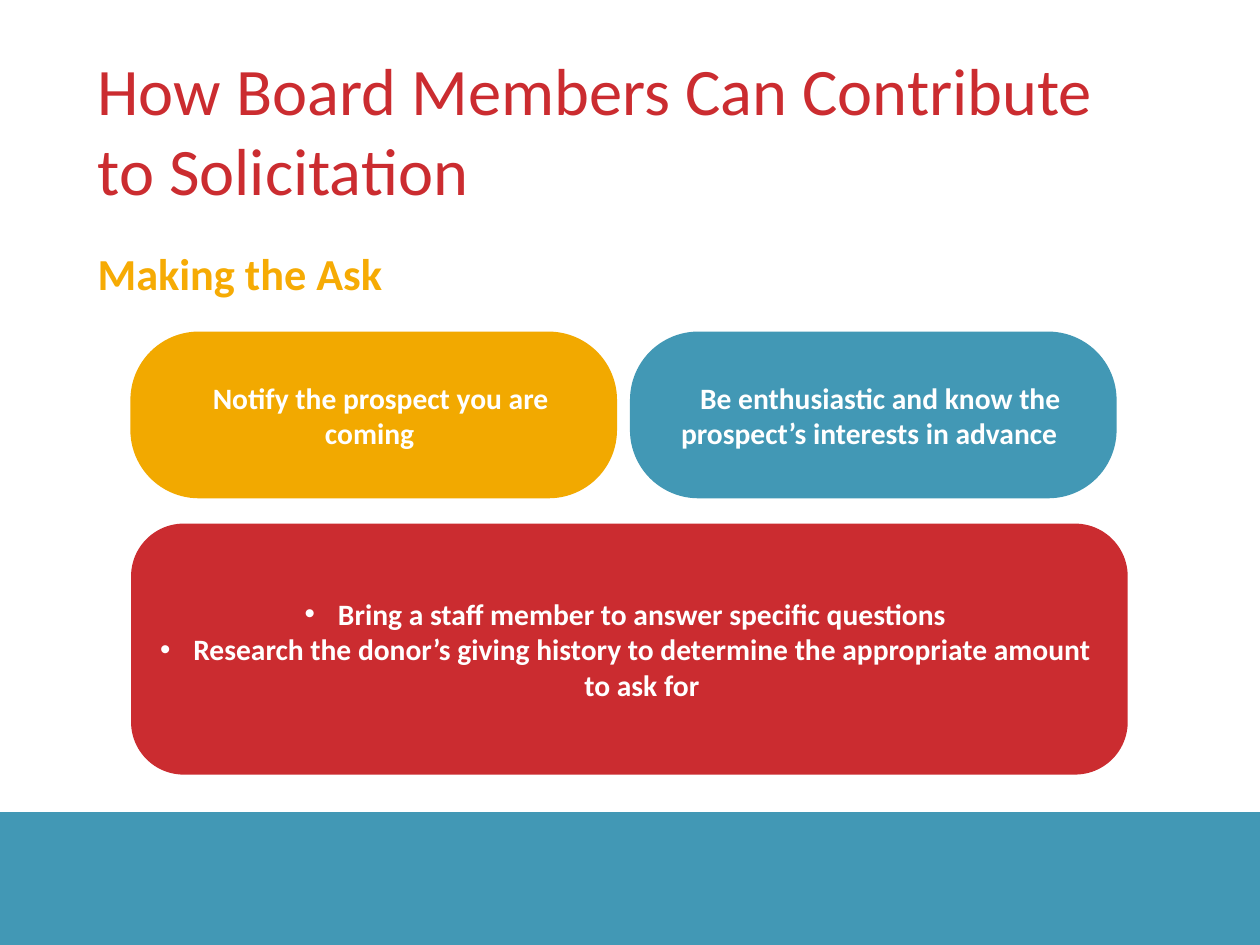
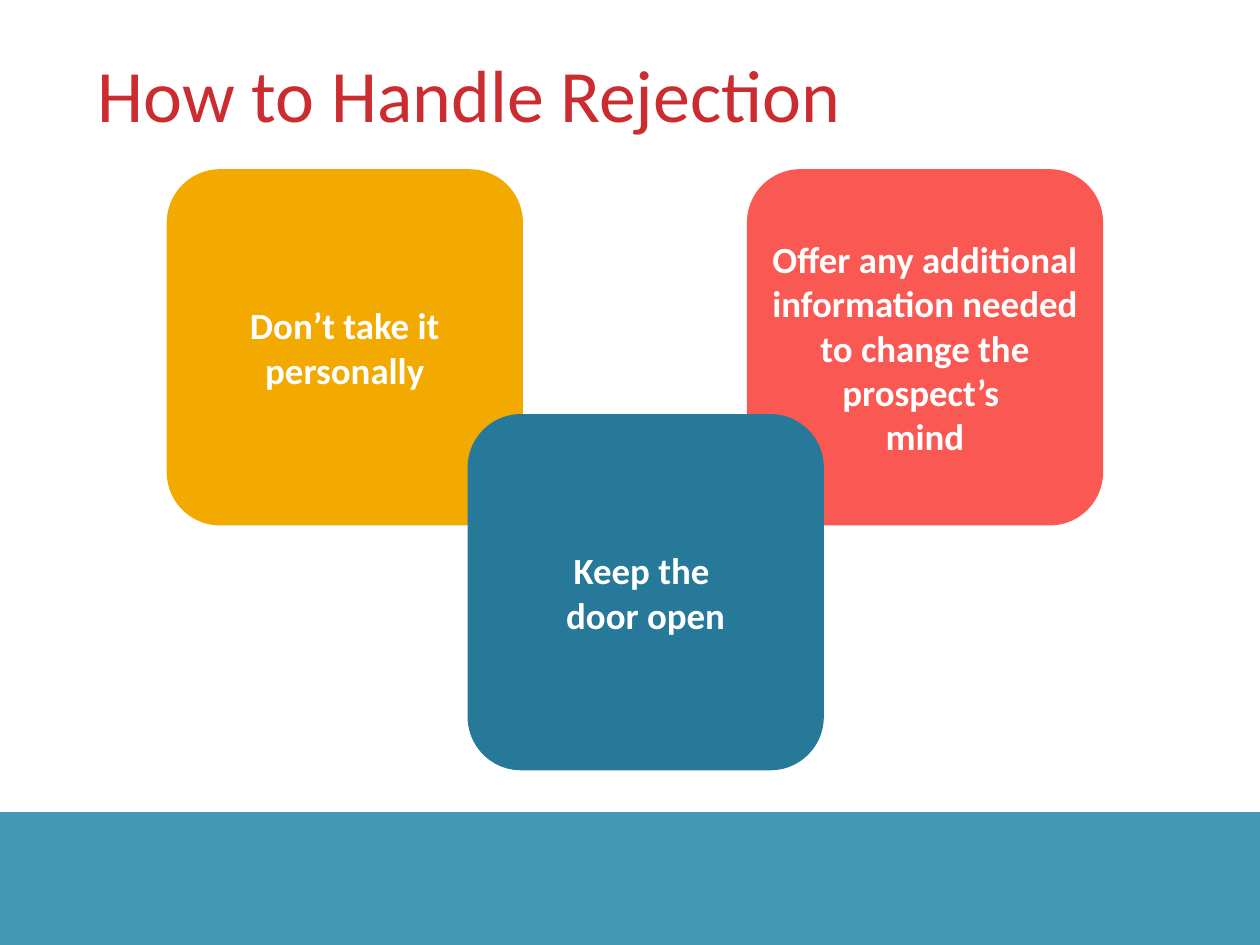
"""Two slides on asking for gifts and handling rejection."""
from lxml import etree
from pptx import Presentation
from pptx.dml.color import RGBColor
from pptx.enum.shapes import MSO_SHAPE
from pptx.enum.text import MSO_ANCHOR, PP_ALIGN
from pptx.oxml.ns import qn
from pptx.util import Pt

RECT, ROUND = MSO_SHAPE.RECTANGLE, MSO_SHAPE.ROUNDED_RECTANGLE
TOP, MIDDLE = MSO_ANCHOR.TOP, MSO_ANCHOR.MIDDLE
LEFT, CENTER = PP_ALIGN.LEFT, PP_ALIGN.CENTER

COLORS = {"red": "CB2C30", "gold": "F2A900", "amber": "F6AB04", "blue": "4298B5",
          "coral": "FA5853", "navy": "267999", "white": "FFFFFF"}
FONT = "Calibri"
SLIDE_W, SLIDE_H = 1024, 768
BAND_TOP = 660
TEXT_X, TEXT_W = 75, 874
INSET = 4.32

ASK_TITLE = "How Board Members Can Contribute to Solicitation"
ASK_SUBTITLE = "Making the Ask"
ASK_TOP = [("Notify the prospect you are coming", "gold"),
           ("Be enthusiastic and know the prospect’s interests in advance", "blue")]
ASK_BULLETS = ["Bring a staff member to answer specific questions",
               "Research the donor’s giving history to determine the appropriate amount to ask for"]
ASK_X, ASK_Y, ASK_W, ASK_H, ASK_GAP = 106, 269.5, 395.5, 135.5, 10.5
BULLETS_BOX = (106.5, 425.5, 810, 204)
ASK_RIGHT_INSET = 11
FIRST_LINE, HANGING = (0, 18), (27, -27)

REJECTION_TITLE = "How to Handle Rejection"
TILE = 289.5
REJECTION_TILES = [("Don’t take it personally", "gold", 135.5, 137.5),
                   ("Offer any additional information needed to change the prospect’s \vmind",
                    "coral", 607, 137.5),
                   ("Keep the \vdoor open", "navy", 380, 336.5)]


def rgb(name):
    return RGBColor.from_string(COLORS[name])


def indent(p, margin, first, bullet=None):
    pPr = p._p.get_or_add_pPr()
    pPr.set("marL", str(Pt(margin)))
    pPr.set("indent", str(Pt(first)))
    if bullet:
        etree.SubElement(pPr, qn("a:buFont")).set("typeface", "Arial")
        etree.SubElement(pPr, qn("a:buChar")).set("char", bullet)


def write(sp, lines, size, color, bold=True, align=CENTER, anchor=MIDDLE,
          right=INSET, margins=None, bullet=None, spacing=None):
    tf = sp.text_frame
    tf.word_wrap = True
    tf.vertical_anchor = anchor
    tf.margin_left = tf.margin_top = tf.margin_bottom = Pt(INSET)
    tf.margin_right = Pt(right)
    tf.text = "\n".join(lines)
    for p in tf.paragraphs:
        p.alignment = align
        if spacing:
            p.line_spacing = spacing
        if margins:
            indent(p, *margins, bullet)
        for r in p.runs:
            r.font.name, r.font.size, r.font.bold = FONT, Pt(size), bold
            r.font.color.rgb = rgb(color)


def add_box(s, kind, color, x, y, w, h, radius=None):
    sp = s.shapes.add_shape(kind, Pt(x), Pt(y), Pt(w), Pt(h))
    sp.shadow.inherit = False
    sp.fill.solid()
    sp.fill.fore_color.rgb = rgb(color)
    sp.line.fill.background()
    if radius:
        sp.adjustments[0] = radius
    return sp


def add_text(s, text, y, h, size, color, bold, spacing=None):
    sp = s.shapes.add_textbox(Pt(TEXT_X), Pt(y), Pt(TEXT_W), Pt(h))
    write(sp, [text], size, color, bold, LEFT, TOP, spacing=spacing)


def add_slide(prs, title, size):
    s = prs.slides.add_slide(prs.slide_layouts[6])
    add_box(s, RECT, "blue", 0, BAND_TOP, SLIDE_W, SLIDE_H - BAND_TOP)
    add_text(s, title, 35.5, 88.5, size, "red", False)
    return s


def build_ask(prs):
    s = add_slide(prs, ASK_TITLE, 54)
    for i, (text, color) in enumerate(ASK_TOP):
        x = ASK_X + i * (ASK_W + ASK_GAP)
        sp = add_box(s, ROUND, color, x, ASK_Y, ASK_W, ASK_H, 0.41)
        write(sp, [text], 24, "white", right=ASK_RIGHT_INSET, margins=FIRST_LINE)
    sp = add_box(s, ROUND, "red", *BULLETS_BOX, 0.21)
    write(sp, ASK_BULLETS, 24, "white", right=ASK_RIGHT_INSET, margins=HANGING, bullet="•")
    add_text(s, ASK_SUBTITLE, 174, 47, 36, "amber", True, 1.5)


def build_rejection(prs):
    s = add_slide(prs, REJECTION_TITLE, 60)
    for text, color, x, y in REJECTION_TILES:
        sp = add_box(s, ROUND, color, x, y, TILE, TILE, 0.15)
        write(sp, [text], 30, "white")


def main():
    prs = Presentation()
    prs.slide_width, prs.slide_height = Pt(SLIDE_W), Pt(SLIDE_H)
    build_ask(prs)
    build_rejection(prs)
    prs.save("out.pptx")


if __name__ == "__main__":
    main()
